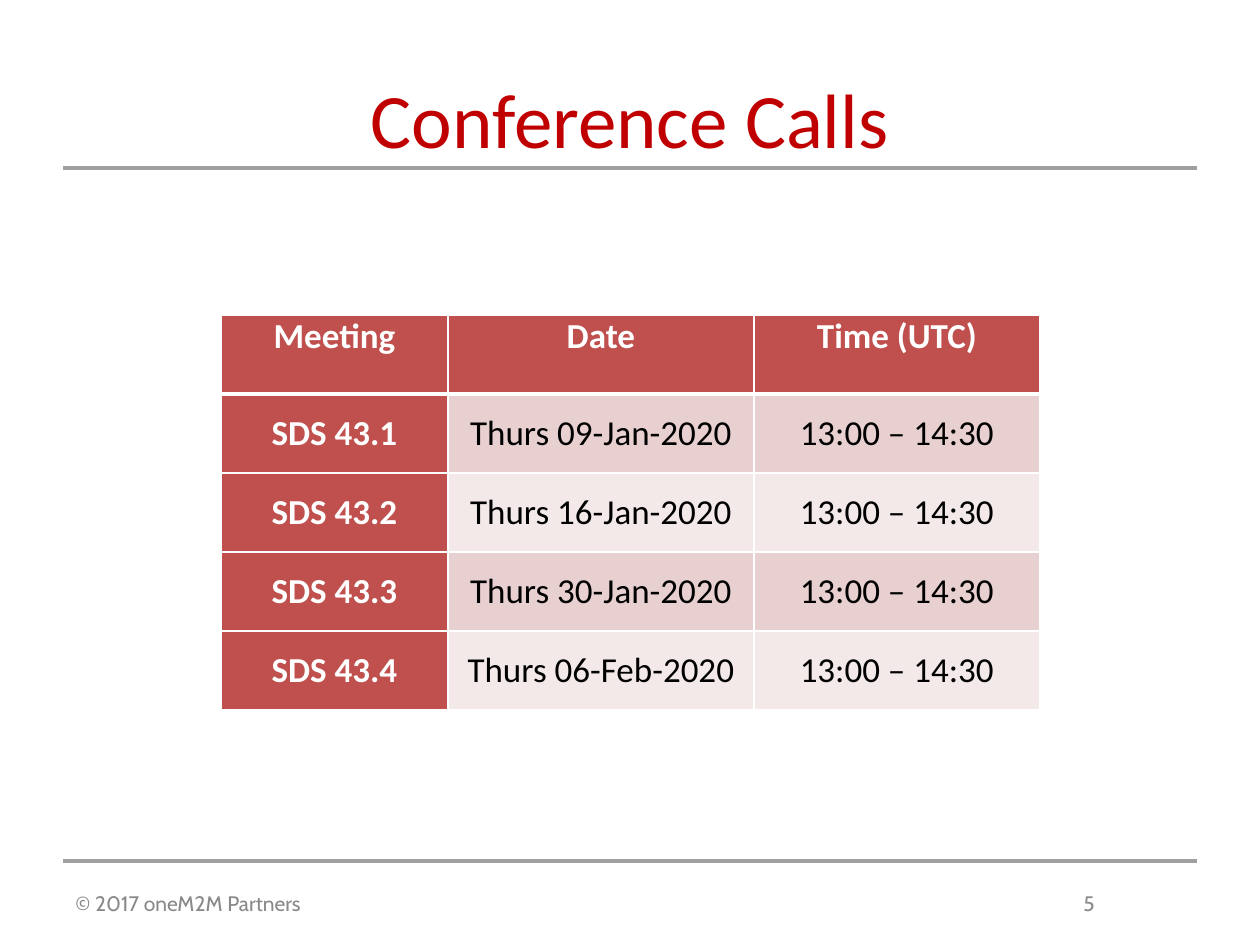
from lxml import etree
from pptx import Presentation
from pptx import util as u
from pptx.dml import color
from pptx.enum import shapes, text
from pptx.oxml import ns

PX = 914400 // 126
RED, WHITE, GREY = "C0504D", "FFFFFF", "898989"


def rgb(value):
    return color.RGBColor.from_string(value)


def style(paragraph, face, size, value, bold=False):
    paragraph.font.name = face
    paragraph.font.size = u.Pt(size)
    paragraph.font.bold = bold
    paragraph.font.color.rgb = rgb(value)


presentation = Presentation()
presentation.slide_width = 1260 * PX
presentation.slide_height = 945 * PX
slide = presentation.slides.add_slide(presentation.slide_layouts[6])

for y in (168, 861):
    rule = slide.shapes.add_connector(
        shapes.MSO_CONNECTOR.STRAIGHT, 63 * PX, y * PX, 1197 * PX, y * PX)
    rule.line.color.rgb = rgb("A0A0A3")
    rule.line.width = u.Pt(1.75)
    etree.SubElement(rule._element.spPr, ns.qn("a:effectLst"))

title = slide.shapes.add_textbox(63 * PX, 63 * PX, 1134 * PX, 158 * PX)
title.text_frame.word_wrap = True
title.text_frame.margin_top = 9 * PX
paragraph = title.text_frame.paragraphs[0]
paragraph.text = "Conference Calls"
paragraph.alignment = text.PP_ALIGN.CENTER
style(paragraph, "Calibri", 44, "C00000")

footer = slide.shapes.add_textbox(63 * PX, 861 * PX, 1134 * PX, 84 * PX)
footer.text_frame.word_wrap = True
footer.text_frame.vertical_anchor = text.MSO_ANCHOR.MIDDLE
paragraph = footer.text_frame.paragraphs[0]
paragraph.text = "© 2017 oneM2M Partners\t5"
tabs = etree.SubElement(paragraph._p.get_or_add_pPr(), ns.qn("a:tabLst"))
etree.SubElement(tabs, ns.qn("a:tab"), pos=str(1008 * PX), algn="l")
style(paragraph, "Cabin", 12, GREY)

dates = ["09-Jan", "16-Jan", "30-Jan", "06-Feb"]
rows = [("Meeting", "Date", "Time (UTC)")]
for number, date in enumerate(dates, 1):
    rows.append((f"SDS 43.{number}", f"Thurs {date}-2020", "13:00 – 14:30"))

widths = [227, 306, 286]
row_height = 79
table = slide.shapes.add_table(
    len(rows), len(widths), 221 * PX, 315 * PX,
    sum(widths) * PX, row_height * len(rows) * PX).table
for column, width in zip(table.columns, widths):
    column.width = width * PX

for r, row in enumerate(rows):
    table.rows[r].height = row_height * PX
    for c, label in enumerate(row):
        cell = table.cell(r, c)
        heading = r == 0 or c == 0
        cell.margin_left = cell.margin_right = 9 * PX
        cell.margin_top = cell.margin_bottom = 0
        cell.vertical_anchor = text.MSO_ANCHOR.MIDDLE if r else text.MSO_ANCHOR.TOP
        for side in ("L", "R", "T", "B"):
            thick = (r, side) in ((0, "B"), (1, "T"))
            border = etree.SubElement(
                cell._tc.get_or_add_tcPr(), ns.qn(f"a:ln{side}"),
                w=str(u.Pt(3 if thick else 1)))
            fill = etree.SubElement(border, ns.qn("a:solidFill"))
            etree.SubElement(fill, ns.qn("a:srgbClr"), val=WHITE)
        cell.fill.solid()
        band = "E8D0D0" if r % 2 else "F4E9E9"
        cell.fill.fore_color.rgb = rgb(RED if heading else band)
        paragraph = cell.text_frame.paragraphs[0]
        paragraph.text = label
        paragraph.alignment = text.PP_ALIGN.CENTER
        style(paragraph, "Calibri", 20, WHITE if heading else "000000", heading)

presentation.save("out.pptx")
